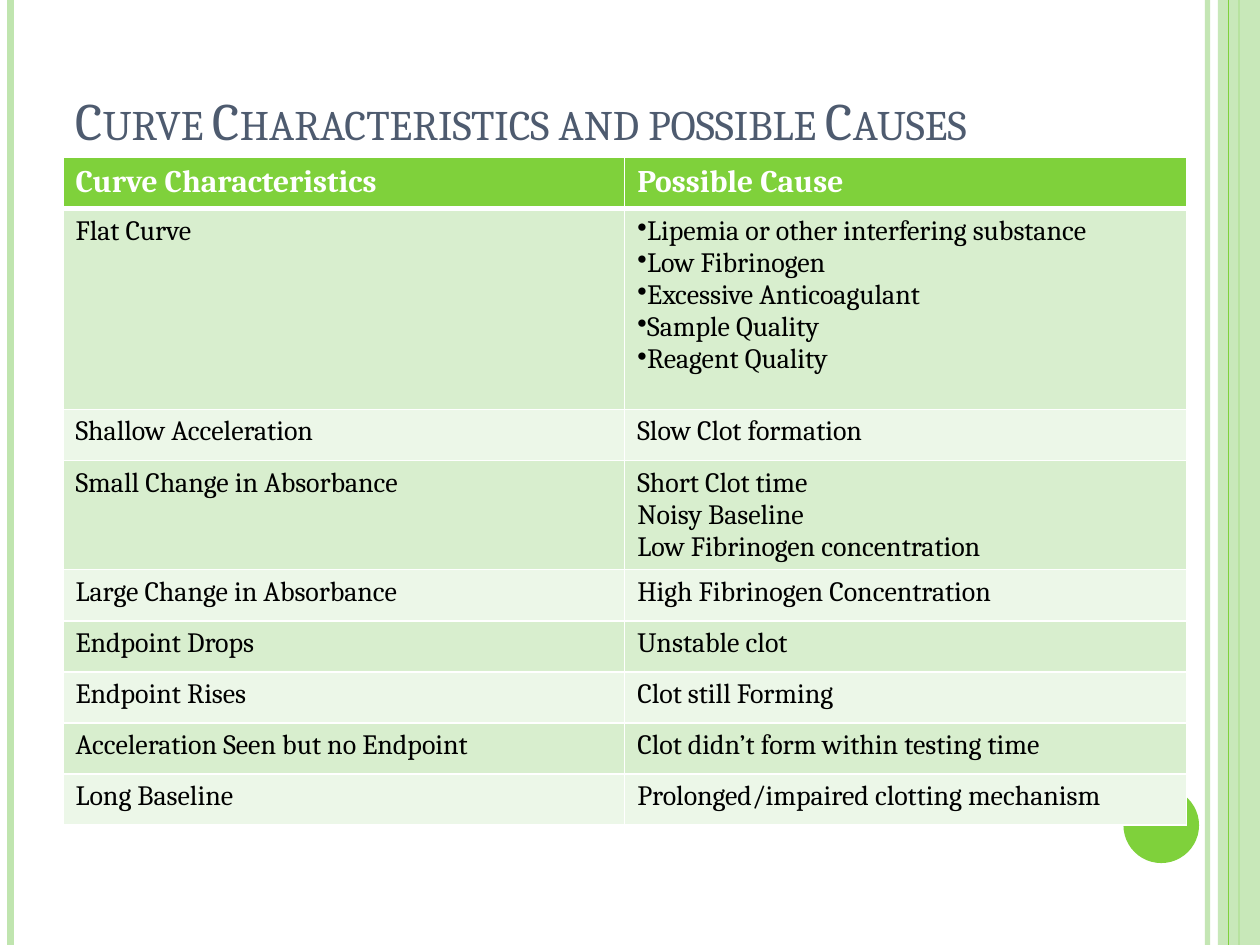
from pptx import Presentation
from pptx.dml.color import RGBColor
from pptx.enum.shapes import MSO_CONNECTOR, MSO_SHAPE
from pptx.enum.text import MSO_ANCHOR, MSO_AUTO_SIZE, PP_ALIGN
from pptx.oxml.ns import qn
from pptx.util import Pt
from lxml import etree

LINE = MSO_CONNECTOR.STRAIGHT
RECT, OVAL = MSO_SHAPE.RECTANGLE, MSO_SHAPE.OVAL
LEFT, BOTTOM = PP_ALIGN.LEFT, MSO_ANCHOR.BOTTOM
NO_FIT = MSO_AUTO_SIZE.NONE

TITLE = "Curve Characteristics and possible Causes"
HEAD = ("Curve Characteristics", "Possible Cause")
ROWS = [
    ("Flat Curve", ["Lipemia or other interfering substance", "Low Fibrinogen",
                    "Excessive Anticoagulant", "Sample Quality", "Reagent Quality"]),
    ("Shallow Acceleration", ["Slow Clot formation"]),
    ("Small Change in Absorbance", ["Short Clot time", "Noisy Baseline",
                                    "Low Fibrinogen concentration"]),
    ("Large Change in Absorbance", ["High Fibrinogen Concentration"]),
    ("Endpoint Drops", ["Unstable clot"]),
    ("Endpoint Rises", ["Clot still Forming"]),
    ("Acceleration Seen but no Endpoint", ["Clot didn’t form within testing time"]),
    ("Long Baseline", ["Prolonged/impaired clotting mechanism"]),
]
BULLET_ROW = "Flat Curve"
HEIGHTS = [29.2, 114.8, 29.2, 62.4] + [29.2] * 5

THEME = {
    "font": "Cambria", "title_size": 30, "head_size": 18, "body_size": 16,
    "green": "7FD13B", "pale": "C0E5AF", "slate": "4E5B6F",
    "white": "FFFFFF", "black": "000000", "bands": ("D8EECE", "ECF7E8"),
}
WIDTH, HEIGHT = 720, 540
EDGE, TOP, SPAN = 36, 90, 642
RULES_BACK = [(690, 3, "pale", 93), (6, 4.5, "pale", 100), (708, 1.5, "green", 100)]
RULE_FRONT = (702, 0.75, "green", 100)


def rgb(name):
    return RGBColor.from_string(THEME.get(name, name))


def fade(fill, pct):
    if pct < 100:
        color = fill.find(".//" + qn("a:srgbClr"))
        etree.SubElement(color, qn("a:alpha"), val=str(pct * 1000))


def add_rule(slide, x, width, color, pct):
    rule = slide.shapes.add_connector(LINE, Pt(x), Pt(0), Pt(x), Pt(HEIGHT))
    rule.line.width = Pt(width)
    rule.line.color.rgb = rgb(color)
    props = rule._element.spPr
    fade(props.find(qn("a:ln")), pct)
    etree.SubElement(props, qn("a:effectLst"))


def add_block(slide, kind, box, color, pct=100):
    shape = slide.shapes.add_shape(kind, *map(Pt, box))
    shape.shadow.inherit = False
    shape.fill.solid()
    shape.fill.fore_color.rgb = rgb(color)
    shape.line.fill.background()
    fade(shape._element.spPr.find(qn("a:solidFill")), pct)


def add_run(para, text, size, color, bold=False):
    run = para.add_run()
    run.text = text
    font = run.font
    font.name, font.size, font.bold = THEME["font"], Pt(size), bold
    font.color.rgb = rgb(color)
    return run


def add_title(slide):
    title = slide.shapes.title
    title.left, title.top, title.width, title.height = map(Pt, (EDGE, 0, 588, TOP))
    frame = title.text_frame
    frame.word_wrap, frame.auto_size = True, NO_FIT
    frame.vertical_anchor = BOTTOM
    para = frame.paragraphs[0]
    para.alignment = LEFT
    run = add_run(para, TITLE, THEME["title_size"], "slate")
    run.font._element.set("cap", "small")


def add_borders(cell, row):
    props = cell._tc.get_or_add_tcPr()
    thick = {"lnB": 3} if row == 0 else {"lnT": 3} if row == 1 else {}
    for side in ("lnL", "lnR", "lnT", "lnB"):
        width = Pt(thick.get(side, 1))
        line = etree.SubElement(props, qn("a:" + side), w=str(width))
        fill = etree.SubElement(line, qn("a:solidFill"))
        etree.SubElement(fill, qn("a:srgbClr"), val=THEME["white"])


def fill_cell(cell, row, lines, bullets):
    add_borders(cell, row)
    cell.fill.solid()
    cell.fill.fore_color.rgb = rgb(THEME["bands"][(row - 1) % 2] if row else "green")
    size, color = ("body_size", "black") if row else ("head_size", "white")
    frame = cell.text_frame
    for i, text in enumerate(lines):
        para = frame.add_paragraph() if i else frame.paragraphs[0]
        if bullets:
            etree.SubElement(para._p.get_or_add_pPr(), qn("a:buChar"), char="•")
        add_run(para, text, THEME[size], color, row == 0)


def add_grid(slide):
    data = [(HEAD[0], [HEAD[1]])] + ROWS
    frame = slide.shapes.add_table(len(data), 2, Pt(EDGE), Pt(TOP), Pt(SPAN), Pt(sum(HEIGHTS)))
    table = frame.table
    for col in table.columns:
        col.width = Pt(SPAN / 2)
    for row, (trait, causes) in enumerate(data):
        table.rows[row].height = Pt(HEIGHTS[row])
        fill_cell(table.cell(row, 0), row, [trait], False)
        fill_cell(table.cell(row, 1), row, causes, trait == BULLET_ROW)


def main():
    deck = Presentation()
    deck.slide_width, deck.slide_height = Pt(WIDTH), Pt(HEIGHT)
    slide = deck.slides.add_slide(deck.slide_layouts[5])
    for rule in RULES_BACK:
        add_rule(slide, *rule)
    add_block(slide, RECT, (696, 0, 24, HEIGHT), "pale", 87)
    add_rule(slide, *RULE_FRONT)
    add_block(slide, OVAL, (642, 450, 43.2, 43.2), "green")
    add_title(slide)
    add_grid(slide)
    deck.save("out.pptx")


if __name__ == "__main__":
    main()
